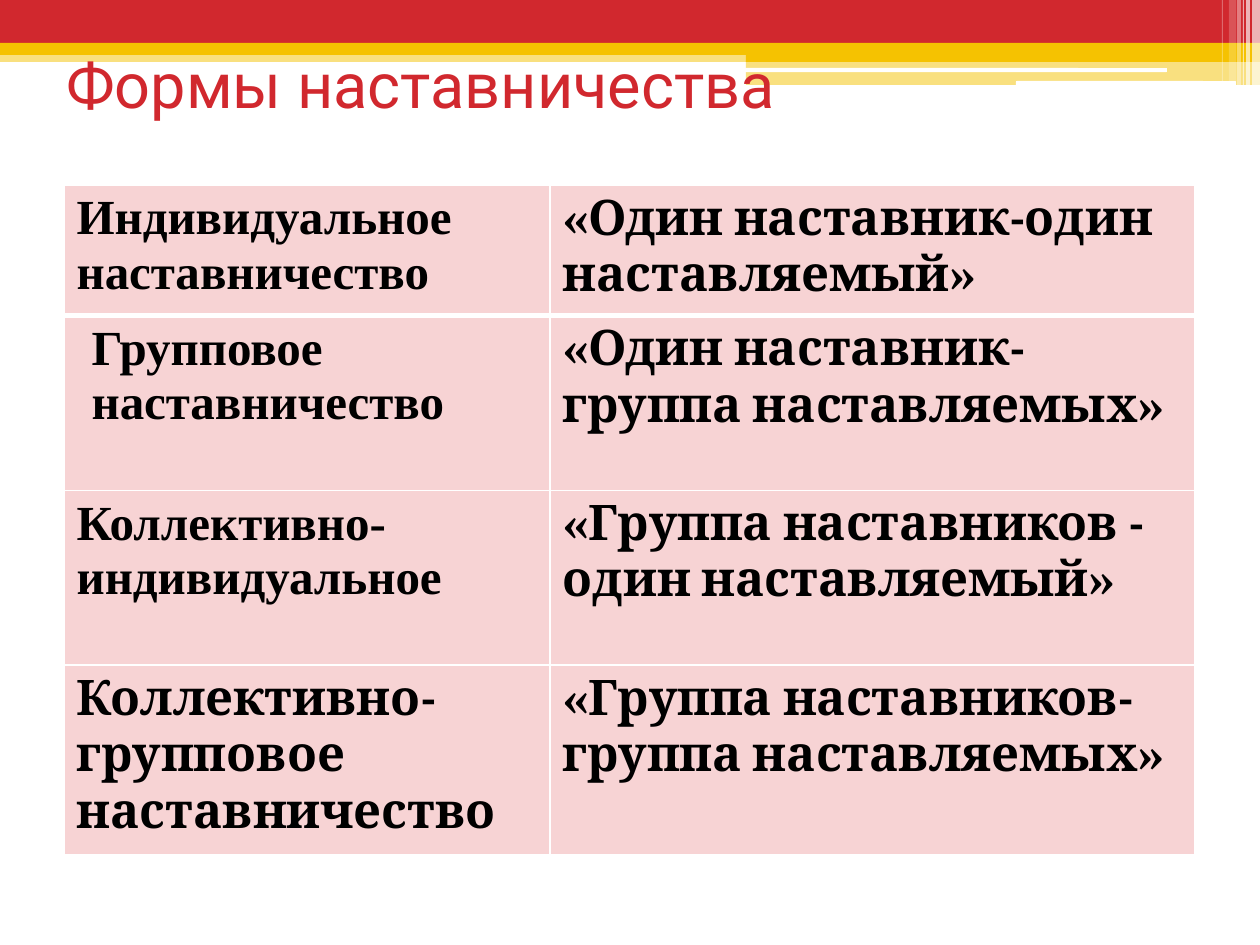
from lxml.etree import SubElement
from pptx import Presentation
from pptx.dml.color import RGBColor
from pptx.enum.shapes import MSO_SHAPE
from pptx.enum.text import MSO_ANCHOR
from pptx.oxml.ns import qn
from pptx.util import Emu, Pt

EMU_PER_PX = 914400 / 126
RED = RGBColor(0xD1, 0x28, 0x2E)
GOLD = RGBColor(0xF5, 0xC2, 0x01)
PINK = RGBColor(0xF7, 0xD3, 0xD4)
WHITE = RGBColor(0xFF, 0xFF, 0xFF)
BLACK = RGBColor(0x00, 0x00, 0x00)

BANDS = [
    (0, 50, 1260, 12, GOLD, 50),
    (0, 0, 1260, 43, RED, 100),
    (0, 43, 1260, 12, GOLD, 100),
    (746, 49, 514, 13, GOLD, 100),
    (746, 61, 514, 24, GOLD, 50),
]
HIGHLIGHTS = [(745, 68, 422, 4), (1016, 81, 220, 5)]
EDGE_STRIPES = [
    (1252, 8, 86, 65),
    (1246, 4, 86, 65),
    (1243, 1, 86, 60),
    (1237, 4, 86, 40),
    (1229, 7, 81, 20),
    (1222, 1, 81, 30),
]
COLUMN_WIDTHS = [486, 645]
ROW_HEIGHTS = [125, 175, 175, 181]
SERIF, ROMAN = "Cambria", "Times New Roman"
MENTORING_FORMS = [
    ("Индивидуальное наставничество", ROMAN, 0,
     "«Один наставник-один наставляемый»"),
    ("Групповое наставничество", ROMAN, 15,
     "«Один наставник- группа наставляемых»"),
    ("Коллективно-индивидуальное", ROMAN, 0,
     "«Группа наставников - один наставляемый»"),
    ("Коллективно-групповое наставничество", SERIF, 0,
     "«Группа наставников-группа наставляемых»"),
]


def px(length):
    return Emu(round(length * EMU_PER_PX))


def add_bar(slide, left, top, width, height, color, opacity=100,
            preset=MSO_SHAPE.RECTANGLE):
    bar = slide.shapes.add_shape(preset, px(left), px(top), px(width), px(height))
    bar.shadow.inherit = False
    bar.line.fill.background()
    bar.fill.solid()
    bar.fill.fore_color.rgb = color
    if opacity < 100:
        tint = bar.fill._xPr.find(qn("a:solidFill"))[0]
        SubElement(tint, qn("a:alpha"), val=str(opacity * 1000))


def write(frame, text, *, font, size, color, bold=False, indent=0):
    frame.word_wrap = True
    paragraph = frame.paragraphs[0]
    if indent:
        properties = paragraph._p.get_or_add_pPr()
        properties.set("marL", str(px(indent)))
        properties.set("indent", "0")
    run = paragraph.add_run()
    run.text = text
    run.font.name = font
    run.font.size = Pt(size)
    run.font.bold = bold
    run.font.color.rgb = color


def style_cell(cell, top, bottom):
    properties = cell._tc.get_or_add_tcPr()
    for side, width in (("L", 1), ("R", 1), ("T", top), ("B", bottom)):
        border = SubElement(properties, qn(f"a:ln{side}"), w=str(Pt(width)))
        fill = SubElement(border, qn("a:solidFill"))
        SubElement(fill, qn("a:srgbClr"), val=str(WHITE))
    cell.fill.solid()
    cell.fill.fore_color.rgb = PINK


def add_header(slide):
    for band in BANDS:
        add_bar(slide, *band)
    for highlight in HIGHLIGHTS:
        add_bar(slide, *highlight, WHITE, preset=MSO_SHAPE.ROUNDED_RECTANGLE)
    for left, width, height, opacity in EDGE_STRIPES:
        add_bar(slide, left, 0, width, height, WHITE, opacity)


def add_title(slide, text):
    title = slide.shapes.add_textbox(px(54), px(55), px(1134), px(57))
    title.text_frame.vertical_anchor = MSO_ANCHOR.MIDDLE
    write(title.text_frame, text, font="Roboto", size=36, color=RED)


def add_forms_table(slide):
    table = slide.shapes.add_table(
        len(ROW_HEIGHTS), len(COLUMN_WIDTHS), px(64), px(185),
        px(sum(COLUMN_WIDTHS)), px(sum(ROW_HEIGHTS))).table
    for column, width in zip(table.columns, COLUMN_WIDTHS):
        column.width = px(width)
    for index, (form, font, indent, scheme) in enumerate(MENTORING_FORMS):
        row = table.rows[index]
        row.height = px(ROW_HEIGHTS[index])
        form_cell, scheme_cell = row.cells
        write(form_cell.text_frame, form, font=font, size=28, color=BLACK,
              bold=True, indent=indent)
        write(scheme_cell.text_frame, scheme, font=SERIF, size=28, color=BLACK,
              bold=True)
        for cell in (form_cell, scheme_cell):
            style_cell(cell, top=3 if index == 1 else 1,
                       bottom=3 if index == 0 else 1)


def main():
    deck = Presentation()
    deck.slide_width, deck.slide_height = px(1260), px(945)
    slide = deck.slides.add_slide(deck.slide_layouts[6])
    add_header(slide)
    add_title(slide, "Формы наставничества")
    add_forms_table(slide)
    deck.save("out.pptx")


if __name__ == "__main__":
    main()
